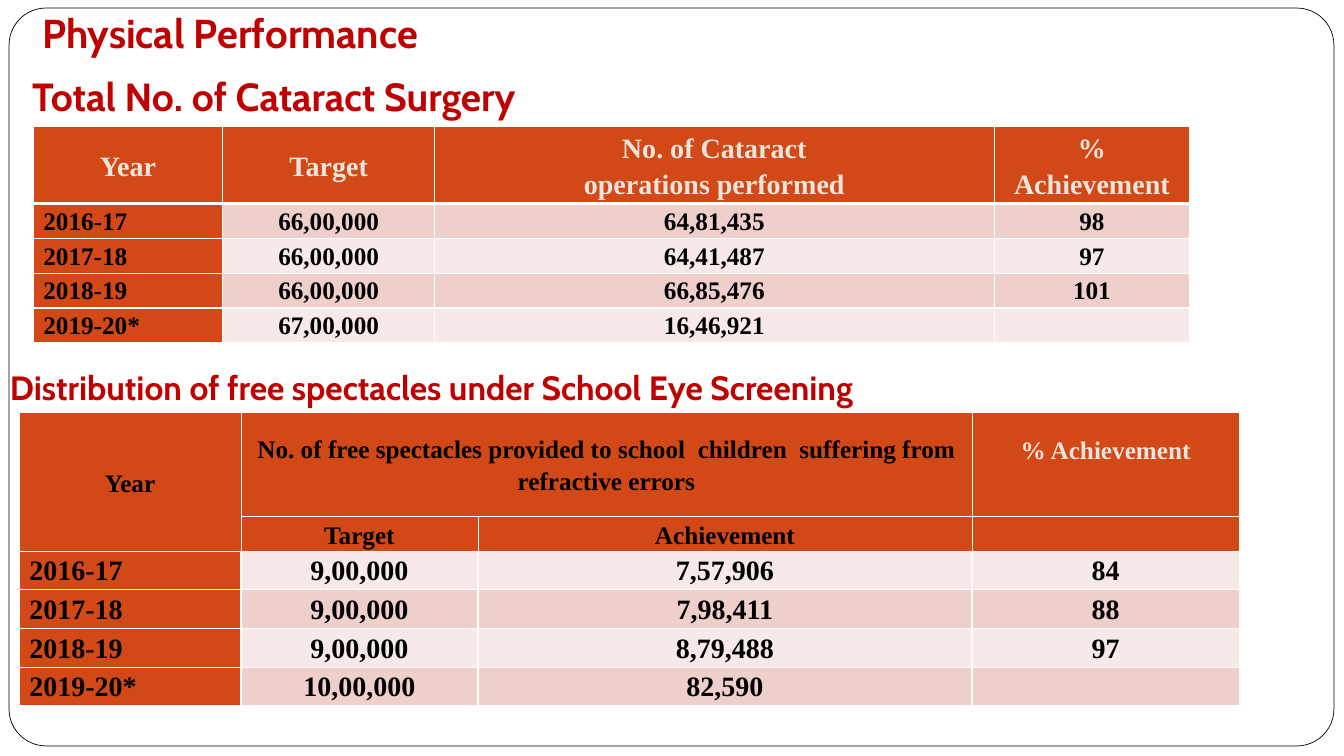
from dataclasses import dataclass

from lxml.etree import SubElement
from pptx import Presentation
from pptx.dml.color import RGBColor
from pptx.enum.shapes import MSO_SHAPE
from pptx.enum.text import MSO_ANCHOR, MSO_AUTO_SIZE, PP_ALIGN
from pptx.oxml.ns import qn
from pptx.util import Inches, Pt


@dataclass(frozen=True)
class Theme:
    heading_font: str = "Cabin"
    table_font: str = "Times New Roman"
    heading: str = "C00000"
    white: str = "FFFFFF"
    black: str = "000000"
    cream: str = "E9E5DC"
    orange: str = "D34817"
    dark_band: str = "EFCFCC"
    light_band: str = "F7E9E8"
    title_size: float = 28.8
    surgery_size: float = 28
    spectacles_size: float = 24
    large: float = 20
    small: float = 18


THEME = Theme()

SURGERY_HEADER = ["Year", "Target", "No. of Cataract\noperations performed", "% Achievement"]
SURGERY_ROWS = [
    ["2016-17", "66,00,000", "64,81,435", "98"],
    ["2017-18", "66,00,000", "64,41,487", "97"],
    ["2018-19", "66,00,000", "66,85,476", "101"],
    ["2019-20*", "67,00,000", "16,46,921", ""],
]
SPECTACLES_HEADER = [
    ["Year",
     "No. of free spectacles provided to school  children  suffering from refractive errors",
     "", "% Achievement"],
    ["", "Target", "Achievement", ""],
]
SPECTACLES_ROWS = [
    ["2016-17", "9,00,000", "7,57,906", "84"],
    ["2017-18", "9,00,000", "7,98,411", "88"],
    ["2018-19", "9,00,000", "8,79,488", "97"],
    ["2019-20*", "10,00,000", "82,590", ""],
]


def add_run(p, text, font, size, color):
    r = p.add_run()
    r.text = text
    r.font.name = font
    r.font.size = Pt(size)
    r.font.bold = True
    r.font.color.rgb = RGBColor.from_string(color)


def add_frame(s):
    sp = s.shapes.add_shape(MSO_SHAPE.ROUNDED_RECTANGLE, Inches(0.09), Inches(0.08),
                            Inches(13.14), Inches(7.32))
    sp.adjustments[0] = 0.05
    sp.shadow.inherit = False
    sp.fill.solid()
    sp.fill.fore_color.rgb = RGBColor.from_string(THEME.white)
    sp.line.color.rgb = RGBColor.from_string(THEME.black)
    sp.line.width = Pt(0.5)
    s.shapes.title.element.addprevious(sp.element)


def set_title(s, text):
    sp = s.shapes.title
    sp.left, sp.top, sp.width, sp.height = (Inches(v) for v in (0.32, 0.24, 12, 0.42))
    tf = sp.text_frame
    tf.auto_size = MSO_AUTO_SIZE.NONE
    tf.vertical_anchor = MSO_ANCHOR.BOTTOM
    tf.margin_left = tf.margin_right = tf.margin_bottom = Inches(0.1)
    tf.margin_top = Inches(0.05)
    p = tf.paragraphs[0]
    p.alignment = PP_ALIGN.LEFT
    add_run(p, text, THEME.heading_font, THEME.title_size, THEME.heading)


def add_heading(s, text, left, top, width, height, size):
    sp = s.shapes.add_textbox(Inches(left), Inches(top), Inches(width), Inches(height))
    tf = sp.text_frame
    tf.word_wrap = True
    add_run(tf.paragraphs[0], text, THEME.heading_font, size, THEME.heading)


def set_borders(cell, top=1, bottom=1, sides=1):
    props = cell._tc.get_or_add_tcPr()
    edges = (("a:lnL", sides), ("a:lnR", sides), ("a:lnT", top), ("a:lnB", bottom))
    for index, (tag, width) in enumerate(edges):
        ln = SubElement(props, qn(tag), w=str(Pt(width)))
        fill = SubElement(ln, qn("a:solidFill"))
        SubElement(fill, qn("a:srgbClr"), val=THEME.white)
        props.insert(index, ln)


def fill_cell(cell, text, fill, size, color, align=PP_ALIGN.CENTER, anchor=MSO_ANCHOR.TOP):
    cell.fill.solid()
    cell.fill.fore_color.rgb = RGBColor.from_string(fill)
    cell.margin_left = cell.margin_right = Inches(0.1)
    cell.margin_top = cell.margin_bottom = 0
    cell.vertical_anchor = anchor
    tf = cell.text_frame
    for index, line in enumerate(text.split("\n")):
        p = tf.add_paragraph() if index else tf.paragraphs[0]
        p.alignment = align
        p.line_spacing = 1.15
        add_run(p, line, THEME.table_font, size, color)


def add_grid(s, left, top, widths, heights):
    table = s.shapes.add_table(len(heights), len(widths), Inches(left), Inches(top),
                               Inches(sum(widths)), Inches(sum(heights))).table
    table.first_row = table.horz_banding = False
    for column, width in zip(table.columns, widths):
        column.width = Inches(width)
    for row, height in zip(table.rows, heights):
        row.height = Inches(height)
    return table


def fill_body(table, first, rows, size, bands, top_border):
    for i, row in enumerate(rows):
        for j, text in enumerate(row):
            cell = table.cell(first + i, j)
            fill = bands[i % 2] if j else THEME.orange
            align = PP_ALIGN.CENTER if j else PP_ALIGN.LEFT
            fill_cell(cell, text, fill, size, THEME.black, align)
            set_borders(cell, top=1 if i else top_border)


def add_surgery_table(s):
    table = add_grid(s, 0.33, 1.25, [1.88, 2.1, 5.55, 1.94], [0.77] + [0.345] * 4)
    for j, text in enumerate(SURGERY_HEADER):
        cell = table.cell(0, j)
        fill_cell(cell, text, THEME.orange, THEME.large, THEME.cream, anchor=MSO_ANCHOR.MIDDLE)
        set_borders(cell, bottom=3)
    fill_body(table, 1, SURGERY_ROWS, THEME.small, (THEME.dark_band, THEME.light_band), 3)


def add_spectacles_table(s):
    table = add_grid(s, 0.19, 4.09, [2.2, 2.35, 4.9, 2.65], [1.03, 0.34] + [0.385] * 4)
    for i, row in enumerate(SPECTACLES_HEADER):
        for j, text in enumerate(row):
            cell = table.cell(i, j)
            color = THEME.cream if j == 3 else THEME.black
            fill_cell(cell, text, THEME.orange, THEME.small, color, anchor=MSO_ANCHOR.MIDDLE)
            set_borders(cell, 0.5, 0.5, 0.5)
    table.cell(0, 3).margin_bottom = Inches(0.3)
    table.cell(0, 0).merge(table.cell(1, 0))
    table.cell(0, 1).merge(table.cell(0, 2))
    fill_body(table, 2, SPECTACLES_ROWS, THEME.large, (THEME.light_band, THEME.dark_band), 0.5)


def main():
    prs = Presentation()
    prs.slide_width, prs.slide_height = Inches(13.33), Inches(7.5)
    s = prs.slides.add_slide(prs.slide_layouts[5])
    add_frame(s)
    set_title(s, "Physical Performance")
    add_heading(s, "Total No. of Cataract Surgery", 0.22, 0.67, 10.44, 0.57, THEME.surgery_size)
    add_surgery_table(s)
    add_heading(s, "Distribution of free spectacles under School Eye Screening",
                0, 3.59, 11.44, 0.51, THEME.spectacles_size)
    add_spectacles_table(s)
    prs.save("out.pptx")


if __name__ == "__main__":
    main()
